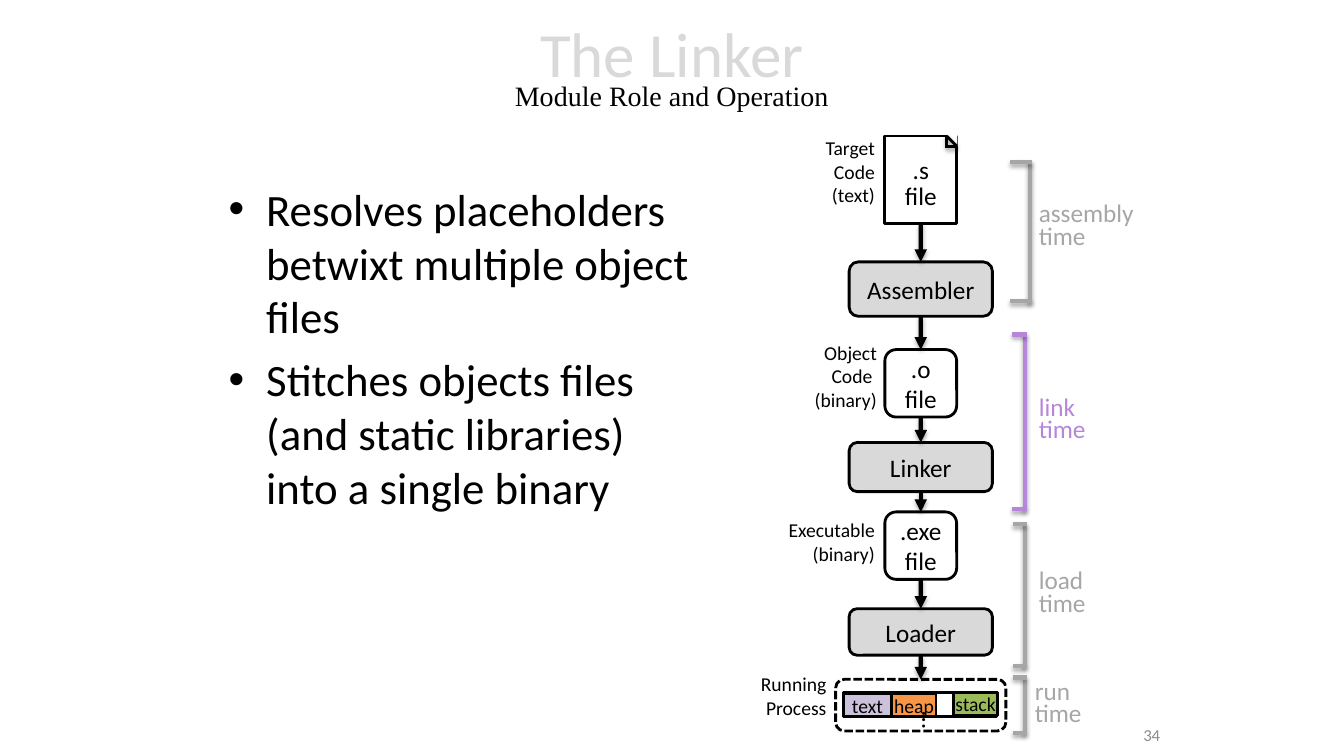
from itertools import pairwise

from lxml.etree import SubElement
from pptx import Presentation
from pptx.dml.color import RGBColor
from pptx.enum.dml import MSO_LINE
from pptx.enum.shapes import MSO_CONNECTOR, MSO_SHAPE
from pptx.enum.text import MSO_ANCHOR, MSO_AUTO_SIZE, PP_ALIGN
from pptx.oxml import parse_xml
from pptx.oxml.ns import qn
from pptx.util import Cm, Pt

BLACK, WHITE, GREY, LIGHT_GREY, VIOLET = "000000", "FFFFFF", "A6A6A6", "D9D9D9", "B686DA"
SHADOW = (
    '<a:effectLst xmlns:a="http://schemas.openxmlformats.org/drawingml/2006/main">'
    '<a:outerShdw blurRad="39370" dist="22860" dir="5400000" rotWithShape="0">'
    '<a:srgbClr val="000000"><a:alpha val="35000"/></a:srgbClr>'
    "</a:outerShdw></a:effectLst>"
)


def write_text(shape, text, size, colour=BLACK, align=PP_ALIGN.LEFT, spacing=None):
    shape.text_frame.text = text
    for paragraph in shape.text_frame.paragraphs:
        paragraph.alignment = align
        paragraph.line_spacing = spacing
        for run in paragraph.runs:
            run.font.name = "Calibri"
            run.font.size = Pt(size)
            run.font.color.rgb = RGBColor.from_string(colour)


def add_line(x1, y1, x2, y2, colour=BLACK, width=3):
    """Draw a straight line with a soft shadow; coordinates are in cm."""
    line = slide.shapes.add_connector(MSO_CONNECTOR.STRAIGHT, Cm(x1), Cm(y1), Cm(x2), Cm(y2))
    line.line.color.rgb = RGBColor.from_string(colour)
    line.line.width = Pt(width)
    line._element.spPr.append(parse_xml(SHADOW))
    return line


prs = Presentation()
prs.slide_width, prs.slide_height = Cm(33.87), Cm(19.05)
slide = prs.slides.add_slide(prs.slide_layouts[5])

# Title with subtitle
title = slide.shapes.title
title.left, title.top, title.width, title.height = Cm(4.23), Cm(0), Cm(25.4), Cm(3.68)
write_text(title, "The Linker\vModule Role and Operation", 45, LIGHT_GREY, PP_ALIGN.CENTER, 0.7)
title.text_frame.auto_size = MSO_AUTO_SIZE.NONE
title.text_frame.vertical_anchor = MSO_ANCHOR.MIDDLE
subtitle = title.text_frame.paragraphs[0].runs[1].font
subtitle.name, subtitle.size = "Times New Roman", Pt(20)
subtitle.color.rgb = RGBColor.from_string(BLACK)

# Linker tasks
tasks = slide.shapes.add_textbox(Cm(5.51), Cm(4.45), Cm(12.27), Cm(12.57))
tasks.text_frame.word_wrap = True
write_text(
    tasks,
    "Resolves placeholders betwixt multiple object files\n"
    "Stitches objects files (and static libraries) into a single binary",
    32,
)
for task in tasks.text_frame.paragraphs:
    task.space_before = Pt(6.4)
    properties = task._p.get_or_add_pPr()
    properties.set("marL", str(Cm(0.95)))
    properties.set("indent", str(Cm(-0.95)))
    SubElement(properties, qn("a:buFont"), typeface="Arial")
    SubElement(properties, qn("a:buChar"), char="•")

# Build steps, then the memory of the running process
RECT, ROUNDED = MSO_SHAPE.RECTANGLE, MSO_SHAPE.ROUNDED_RECTANGLE
STEP_COUNT = 7
boxes = []
for text, kind, left, top, width, height, fill, size in [
    (".s\nfile", RECT, 22.3, 3.43, 1.81, 2.21, WHITE, 18),
    ("Assembler", ROUNDED, 21.4, 6.6, 3.61, 1.37, LIGHT_GREY, 18),
    (".o\nfile", ROUNDED, 22.3, 8.81, 1.81, 1.7, WHITE, 18),
    ("Linker", ROUNDED, 21.4, 11.15, 3.61, 1.24, LIGHT_GREY, 18),
    (".exe\nfile", ROUNDED, 22.3, 12.9, 1.81, 1.7, WHITE, 18),
    ("Loader", ROUNDED, 21.4, 15.34, 3.61, 1.17, LIGHT_GREY, 18),
    ("", ROUNDED, 21.06, 17.12, 4.29, 1.3, WHITE, 18),
    ("", RECT, 21.26, 17.45, 3.86, 0.6, WHITE, 14),
    ("stack", RECT, 24.03, 17.45, 1.11, 0.58, "9BBB59", 14),
    ("text", RECT, 21.26, 17.48, 1.2, 0.58, "CCC1DA", 14),
    ("heap", RECT, 22.48, 17.48, 1.11, 0.58, "F79646", 14),
]:
    box = slide.shapes.add_shape(kind, Cm(left), Cm(top), Cm(width), Cm(height))
    box.shadow.inherit = False
    box.fill.solid()
    box.fill.fore_color.rgb = RGBColor.from_string(fill)
    box.line.color.rgb = RGBColor.from_string(BLACK)
    box.line.width = Pt(2)
    box.text_frame.margin_left = box.text_frame.margin_right = 0
    box.text_frame.vertical_anchor = MSO_ANCHOR.MIDDLE
    if text:
        write_text(box, text, size, align=PP_ALIGN.CENTER)
    boxes.append(box)

steps = boxes[:STEP_COUNT]
source_file, process = steps[0], steps[-1]
process.line.dash_style = MSO_LINE.SQUARE_DOT
source_file.text_frame.margin_top = Cm(0.35)
for paragraph in source_file.text_frame.paragraphs:
    paragraph.line_spacing = Pt(18.6)

for step, next_step in pairwise(steps):
    arrow = add_line(0, 0, 1, 1)
    arrow.begin_connect(step, 2)
    arrow.end_connect(next_step, 0)
    SubElement(arrow.line._get_or_add_ln(), qn("a:tailEnd"), type="triangle")

# Folded corner of the source file
corner = slide.shapes.add_shape(RECT, Cm(23.88), Cm(3.4), Cm(0.25), Cm(0.28))
corner.shadow.inherit = False
corner.fill.solid()
corner.fill.fore_color.rgb = RGBColor.from_string(WHITE)
corner.line.fill.background()
for fold in [(23.86, 3.43, 23.86, 3.72), (24.11, 3.7, 23.86, 3.7), (23.86, 3.43, 24.11, 3.68)]:
    add_line(*fold, width=2)

# Time brackets
for colour, spine, top, bottom, tick_left in [
    (GREY, 25.96, 4.09, 7.59, 25.45),
    (VIOLET, 25.83, 8.43, 12.83, 25.5),
    (GREY, 25.83, 13.21, 16.79, 25.53),
    (GREY, 25.83, 17.07, 18.47, 25.53),
]:
    add_line(spine, top - 0.03, spine, bottom + 0.03, colour)
    for y in (top, bottom):
        add_line(spine + 0.04, y, tick_left, y, colour)

# Labels beside the steps and brackets
LEFT, RIGHT = PP_ALIGN.LEFT, PP_ALIGN.RIGHT
for text, left, top, width, height, size, colour, align, spacing in [
    ("Target\nCode\n(text)", 20.52, 3.3, 1.78, 2.06, 14, BLACK, RIGHT, None),
    ("Object\nCode \n(binary)", 20.24, 8.46, 2.11, 2.06, 14, BLACK, RIGHT, None),
    ("Executable\n(binary)", 19.58, 12.93, 2.72, 1.45, 14, BLACK, RIGHT, None),
    ("Running\nProcess", 18.9, 16.81, 2.18, 1.45, 14, BLACK, RIGHT, None),
    ("assembly\ntime", 25.93, 5.05, 3.07, 1.42, 18, GREY, LEFT, Pt(16)),
    ("link\ntime", 25.93, 9.93, 1.7, 1.42, 18, VIOLET, LEFT, Pt(16)),
    ("load\ntime", 25.93, 14.3, 1.8, 1.42, 18, GREY, LEFT, Pt(16)),
    ("run\ntime", 25.83, 17.09, 1.7, 1.42, 18, GREY, LEFT, Pt(16)),
]:
    label = slide.shapes.add_textbox(Cm(left), Cm(top), Cm(width), Cm(height))
    label.text_frame.word_wrap = False
    label.text_frame.auto_size = MSO_AUTO_SIZE.SHAPE_TO_FIT_TEXT
    write_text(label, text, size, colour, align, spacing)

free_memory = slide.shapes.add_textbox(Cm(23.01), Cm(17.65), Cm(0.97), Cm(1.02))
free_memory.rotation = 90
free_memory.text_frame.word_wrap = False
write_text(free_memory, "…", 18)

page_number = slide.shapes.add_textbox(Cm(23.57), Cm(18.01), Cm(5.92), Cm(1.02))
page_number.text_frame.vertical_anchor = MSO_ANCHOR.MIDDLE
page_number.text_frame.word_wrap = True
write_text(page_number, "34", 12, "8C8C8C", RIGHT)

prs.save("out.pptx")
